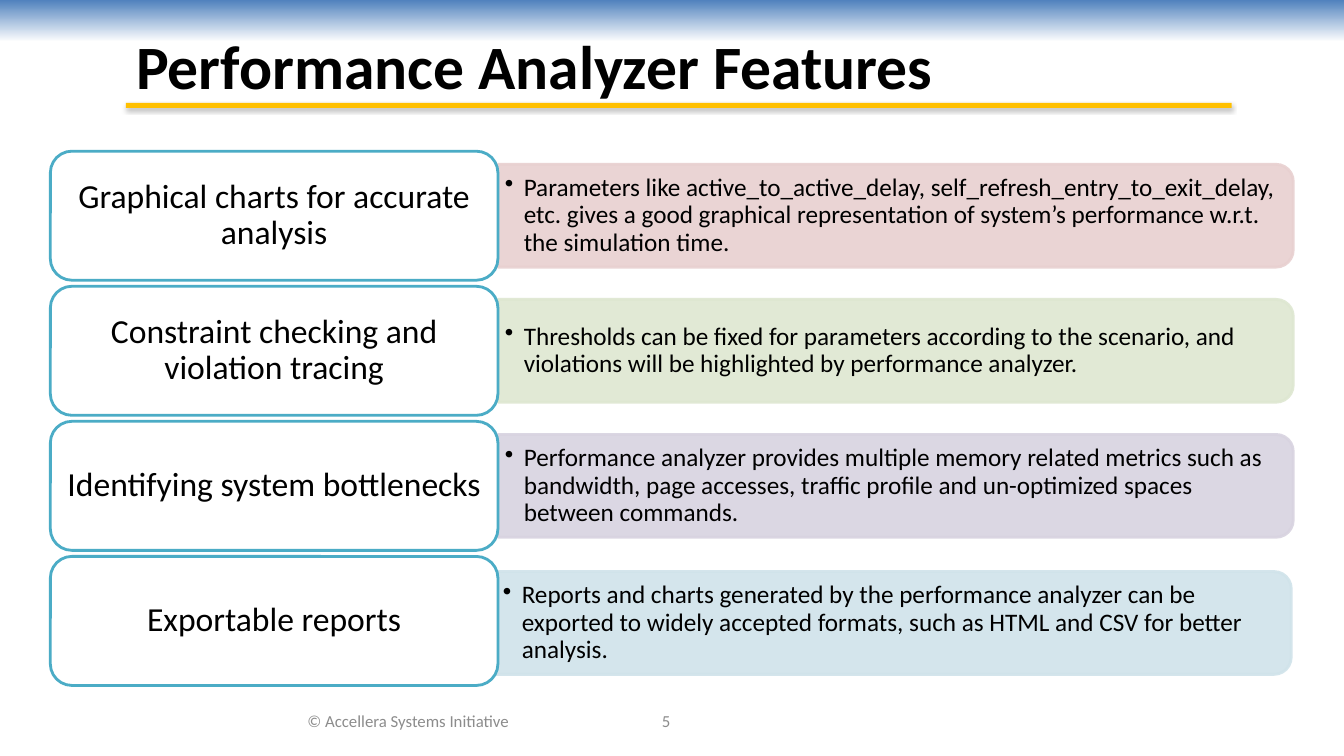
from dataclasses import dataclass

from lxml.etree import SubElement
from pptx import Presentation
from pptx.dml.color import RGBColor
from pptx.enum.shapes import MSO_SHAPE
from pptx.enum.text import MSO_ANCHOR, MSO_AUTO_SIZE, PP_ALIGN
from pptx.oxml.ns import qn
from pptx.shapes.autoshape import Shape
from pptx.slide import Slide
from pptx.text.text import TextFrame
from pptx.util import Pt

COLORS = {
    "black": "000000",
    "white": "FFFFFF",
    "band": "4F81BD",
    "rule": "FFC000",
    "outline": "4BACC6",
    "footer": "8C8C8C",
    "rose": "E8D0D0",
    "green": "DEE7D1",
    "violet": "D8D3E0",
    "aqua": "D0E3EA",
}
LABEL_LEFT, LABEL_TOP, LABEL_WIDTH, LABEL_HEIGHT = 36, 108, 319.68, 92.16
ROW_PITCH = 96.48
PANEL_LEFT, PANEL_WIDTH, PANEL_HEIGHT = 355.68, 568.08, 73.44
DETAIL_WIDTH, DETAIL_HEIGHT = 564.48, 66.24
BULLET_INDENT = 13.5


@dataclass(frozen=True)
class Feature:
    label: str
    detail: str
    color: str
    shift_x: float = 0
    shift_y: float = 0


@dataclass(frozen=True)
class FooterItem:
    text: str
    left: float
    width: float


FEATURES = [
    Feature(
        "Graphical charts for accurate analysis",
        "Parameters like active_to_active_delay, self_refresh_entry_to_exit_delay, etc. gives a "
        "good graphical representation of system’s performance w.r.t. the simulation time.",
        "rose",
    ),
    Feature(
        "Constraint checking and violation tracing",
        "Thresholds can be fixed for parameters according to the scenario, and violations will "
        "be highlighted by performance analyzer.",
        "green",
    ),
    Feature(
        "Identifying system bottlenecks",
        "Performance analyzer provides multiple memory related metrics such as bandwidth, page "
        "accesses, traffic profile and un-optimized spaces between commands.",
        "violet",
    ),
    Feature(
        "Exportable reports",
        "Reports and charts generated by the performance analyzer can be exported to widely "
        "accepted formats, such as HTML and CSV for better analysis.",
        "aqua",
        shift_x=-1.44,
        shift_y=1.44,
    ),
]
FOOTER = [
    FooterItem("© Accellera Systems Initiative", 175.68, 231.84),
    FooterItem("5", 383.76, 184.32),
]


def rgb(name: str) -> RGBColor:
    return RGBColor.from_string(COLORS[name])


def add_block(page: Slide, kind: MSO_SHAPE, left: float, top: float,
              width: float, height: float) -> Shape:
    block = page.shapes.add_shape(kind, Pt(left), Pt(top), Pt(width), Pt(height))
    block.shadow.inherit = False
    block.line.fill.background()
    return block


def paint(block: Shape, fill: str, outline: str) -> None:
    block.fill.solid()
    block.fill.fore_color.rgb = rgb(fill)
    block.line.color.rgb = rgb(outline)
    block.line.width = Pt(2)


def write(frame: TextFrame, text: str, size: float, color: str = "black",
          align: PP_ALIGN = PP_ALIGN.CENTER, bold: bool = False) -> None:
    frame.word_wrap = True
    frame.auto_size = MSO_AUTO_SIZE.NONE
    frame.vertical_anchor = MSO_ANCHOR.MIDDLE
    frame.text = text
    para = frame.paragraphs[0]
    para.alignment = align
    for span in para.runs:
        span.font.name = "Calibri"
        span.font.size = Pt(size)
        span.font.bold = bold
        span.font.color.rgb = rgb(color)


def add_band(page: Slide) -> None:
    band = add_block(page, MSO_SHAPE.RECTANGLE, 0, 0, 960, 30)
    band.fill.gradient()
    band.fill.gradient_angle = 270
    for stop, name in zip(band.fill.gradient_stops, ("band", "white")):
        stop.color.rgb = rgb(name)


def add_rule(page: Slide) -> None:
    rule = add_block(page, MSO_SHAPE.RECTANGLE, 90, 73.44, 789.84, 3.6)
    rule.fill.solid()
    rule.fill.fore_color.rgb = rgb("rule")
    effects = rule.element.spPr.find(qn("a:effectLst"))
    shadow = SubElement(effects, qn("a:outerShdw"), blurRad=str(Pt(3.1)),
                        dist=str(Pt(1.8)), dir="5400000", rotWithShape="0")
    shade = SubElement(shadow, qn("a:srgbClr"), val=COLORS["black"])
    SubElement(shade, qn("a:alpha"), val="35000")


def add_panel(page: Slide, feature: Feature, middle: float) -> None:
    center_x = PANEL_LEFT + PANEL_WIDTH / 2 + feature.shift_x
    panel = add_block(page, MSO_SHAPE.ROUND_2_SAME_RECTANGLE, center_x - PANEL_HEIGHT / 2,
                      middle - PANEL_WIDTH / 2, PANEL_HEIGHT, PANEL_WIDTH)
    panel.rotation = 90
    paint(panel, feature.color, feature.color)
    for color in panel.element.spPr.iter(qn("a:srgbClr")):
        SubElement(color, qn("a:alpha"), val="90000")


def add_detail(page: Slide, feature: Feature, middle: float) -> None:
    box = page.shapes.add_textbox(Pt(PANEL_LEFT + feature.shift_x), Pt(middle - DETAIL_HEIGHT / 2),
                                  Pt(DETAIL_WIDTH), Pt(DETAIL_HEIGHT))
    frame = box.text_frame
    frame.margin_left = frame.margin_right = Pt(5)
    frame.margin_top = frame.margin_bottom = Pt(2.5)
    write(frame, feature.detail, 18, align=PP_ALIGN.LEFT)
    para = frame.paragraphs[0]
    para.line_spacing = 0.9
    properties = para._p.get_or_add_pPr()
    properties.set("marL", str(Pt(BULLET_INDENT)))
    properties.set("indent", str(-Pt(BULLET_INDENT)))
    SubElement(properties, qn("a:buChar"), char="•")


def add_feature(page: Slide, feature: Feature, row: int) -> None:
    top = LABEL_TOP + row * ROW_PITCH
    middle = top + LABEL_HEIGHT / 2
    add_panel(page, feature, middle + feature.shift_y)
    add_detail(page, feature, middle + feature.shift_y)
    label = add_block(page, MSO_SHAPE.ROUNDED_RECTANGLE, LABEL_LEFT, top,
                      LABEL_WIDTH, LABEL_HEIGHT)
    paint(label, "white", "outline")
    write(label.text_frame, feature.label, 24)
    label.text_frame.paragraphs[0].line_spacing = 0.9


def main() -> None:
    deck = Presentation()
    deck.slide_width, deck.slide_height = Pt(960), Pt(540)
    page = deck.slides.add_slide(deck.slide_layouts.get_by_name("Title Only"))
    add_band(page)
    add_rule(page)
    title = page.shapes.title
    title.left, title.top, title.width, title.height = Pt(90), Pt(15.12), Pt(779.76), Pt(61.92)
    write(title.text_frame, "Performance Analyzer Features", 44, align=PP_ALIGN.LEFT, bold=True)
    for row, feature in enumerate(FEATURES):
        add_feature(page, feature, row)
    for item in FOOTER:
        box = page.shapes.add_textbox(Pt(item.left), Pt(500.4), Pt(item.width), Pt(28.8))
        write(box.text_frame, item.text, 12, "footer")
    deck.save("out.pptx")


if __name__ == "__main__":
    main()
